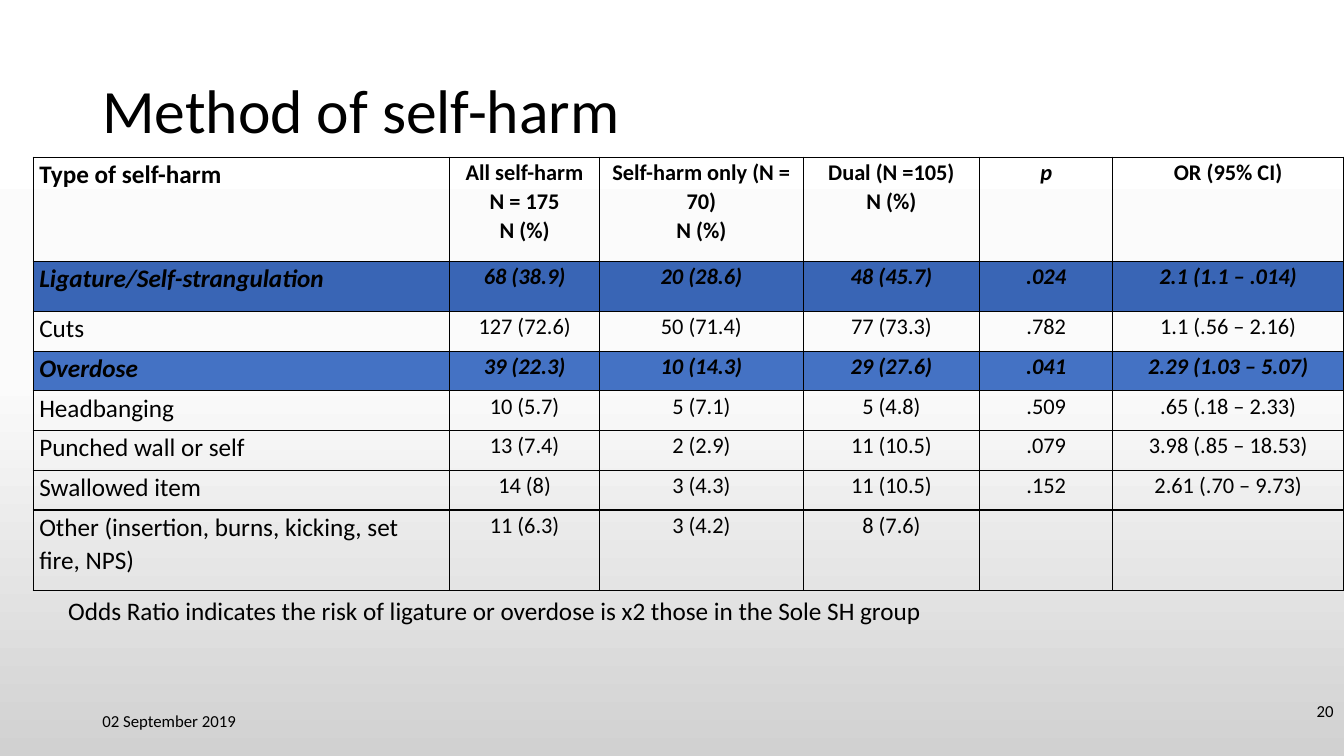
from copy import deepcopy

from lxml import etree
from pptx import Presentation
from pptx.dml.color import RGBColor
from pptx.enum.text import MSO_ANCHOR, PP_ALIGN
from pptx.oxml.ns import qn
from pptx.util import Cm, Pt

LEFT, CENTER, RIGHT = PP_ALIGN.LEFT, PP_ALIGN.CENTER, PP_ALIGN.RIGHT
TOP, MIDDLE = MSO_ANCHOR.TOP, MSO_ANCHOR.MIDDLE

FONT = "Calibri"
BLACK = RGBColor(0x00, 0x00, 0x00)
LIGATURE_BLUE = RGBColor(0x39, 0x65, 0xB5)
OVERDOSE_BLUE = RGBColor(0x44, 0x72, 0xC4)
BACKGROUND_STOPS = [
    (0, RGBColor(0xFF, 0xFF, 0xFF)),
    (0.5, RGBColor(0xFB, 0xFB, 0xFB)),
    (1, RGBColor(0xD1, 0xD1, 0xD1)),
]

COLUMN_WIDTHS = [10.49, 3.78, 5.13, 4.45, 3.35, 5.82]
ROW_HEIGHTS = [2.62, 1.27, 1, 1, 1, 1, 1, 2.03]
METHODS = [
    ["Type of self-harm", "All self-harm\nN = 175\nN (%)", "Self-harm only (N = 70)\nN (%)",
     "Dual (N =105)\nN (%)", "p", "OR (95% CI)"],
    ["Ligature/Self-strangulation", "68 (38.9)", "20 (28.6)", "48 (45.7)", ".024", "2.1 (1.1 – .014)"],
    ["Cuts", "127 (72.6)", "50 (71.4)", "77 (73.3)", ".782", "1.1 (.56 – 2.16)"],
    ["Overdose", "39 (22.3)", "10 (14.3)", "29 (27.6)", ".041", "2.29 (1.03 – 5.07)"],
    ["Headbanging", "10 (5.7)", "5 (7.1)", "5 (4.8)", ".509", ".65 (.18 – 2.33)"],
    ["Punched wall or self", "13 (7.4)", "2 (2.9)", "11 (10.5)", ".079", "3.98 (.85 – 18.53)"],
    ["Swallowed item", "14 (8)", "3 (4.3)", "11 (10.5)", ".152", "2.61 (.70 – 9.73)"],
    ["Other (insertion, burns, kicking, set fire, NPS)", "11 (6.3)", "3 (4.2)", "8 (7.6)", "", ""],
]
SIGNIFICANT_ROWS = {1: LIGATURE_BLUE, 3: OVERDOSE_BLUE}


def set_background(slide):
    fill = slide.background.fill
    fill.gradient()
    fill.gradient_angle = 270
    stop_list = slide.element.find(".//" + qn("a:gsLst"))
    stop_list.append(deepcopy(stop_list[-1]))
    for stop, (position, color) in zip(fill.gradient_stops, BACKGROUND_STOPS):
        stop.position = position
        stop.color.rgb = color


def style_paragraph(paragraph, size, align, spacing, bold=False, italic=False):
    paragraph.alignment = align
    paragraph.line_spacing = spacing
    font = paragraph.font
    font.name, font.size, font.color.rgb = FONT, Pt(size), BLACK
    font.bold, font.italic = bold, italic


def add_text(slide, text, left, top, width, height, size, align=LEFT, anchor=MIDDLE,
             spacing=1.0, wrap=True):
    frame = slide.shapes.add_textbox(Cm(left), Cm(top), Cm(width), Cm(height)).text_frame
    frame.word_wrap = wrap
    frame.vertical_anchor = anchor
    frame.text = text
    style_paragraph(frame.paragraphs[0], size, align, spacing)


def add_borders(cell):
    """Draw a thin black line on all four sides, ahead of the cell's fill."""
    properties = cell._tc.get_or_add_tcPr()
    for index, side in enumerate(("a:lnL", "a:lnR", "a:lnT", "a:lnB")):
        line = etree.Element(qn(side), w=str(Pt(1)))
        solid = etree.SubElement(line, qn("a:solidFill"))
        etree.SubElement(solid, qn("a:srgbClr"), val=str(BLACK))
        properties.insert(index, line)


def fill_cell(cell, text, row, column):
    cell.margin_left = cell.margin_right = Cm(0.15)
    cell.margin_top = cell.margin_bottom = 0
    if row in SIGNIFICANT_ROWS:
        cell.fill.solid()
        cell.fill.fore_color.rgb = SIGNIFICANT_ROWS[row]
    else:
        cell.fill.background()
    add_borders(cell)
    cell.text = text
    size, align = (18, LEFT) if column == 0 else (16, CENTER)
    bold = row == 0 or row in SIGNIFICANT_ROWS
    italic = text == "p" or row in SIGNIFICANT_ROWS
    for paragraph in cell.text_frame.paragraphs:
        style_paragraph(paragraph, size, align, 1.07, bold, italic)


def add_methods_table(slide):
    table = slide.shapes.add_table(
        len(ROW_HEIGHTS), len(COLUMN_WIDTHS), Cm(0.84), Cm(3.96),
        Cm(sum(COLUMN_WIDTHS)), Cm(sum(ROW_HEIGHTS))).table
    table.first_row = table.horz_banding = False
    for column, width in zip(table.columns, COLUMN_WIDTHS):
        column.width = Cm(width)
    for row, height in zip(table.rows, ROW_HEIGHTS):
        row.height = Cm(height)
    for row, texts in enumerate(METHODS):
        for column, text in enumerate(texts):
            fill_cell(table.cell(row, column), text, row, column)


def main():
    presentation = Presentation()
    presentation.slide_width, presentation.slide_height = Cm(33.87), Cm(19.05)
    slide = presentation.slides.add_slide(presentation.slide_layouts[6])
    set_background(slide)
    add_text(slide, "Method of self-harm", 2.33, 1.01, 29.21, 3.68, 44, spacing=0.9)
    add_methods_table(slide)
    add_text(slide, "02 September 2019", 2.33, 17.66, 7.62, 1.01, 12)
    add_text(slide, "20", 25.96, 17.25, 7.9, 1.32, 12, align=RIGHT)
    add_text(slide, "Odds Ratio indicates the risk of ligature or overdose is x2 those in the Sole SH group",
             1.47, 14.88, 27.97, 1.03, 18, anchor=TOP, wrap=False)
    presentation.save("out.pptx")


if __name__ == "__main__":
    main()
